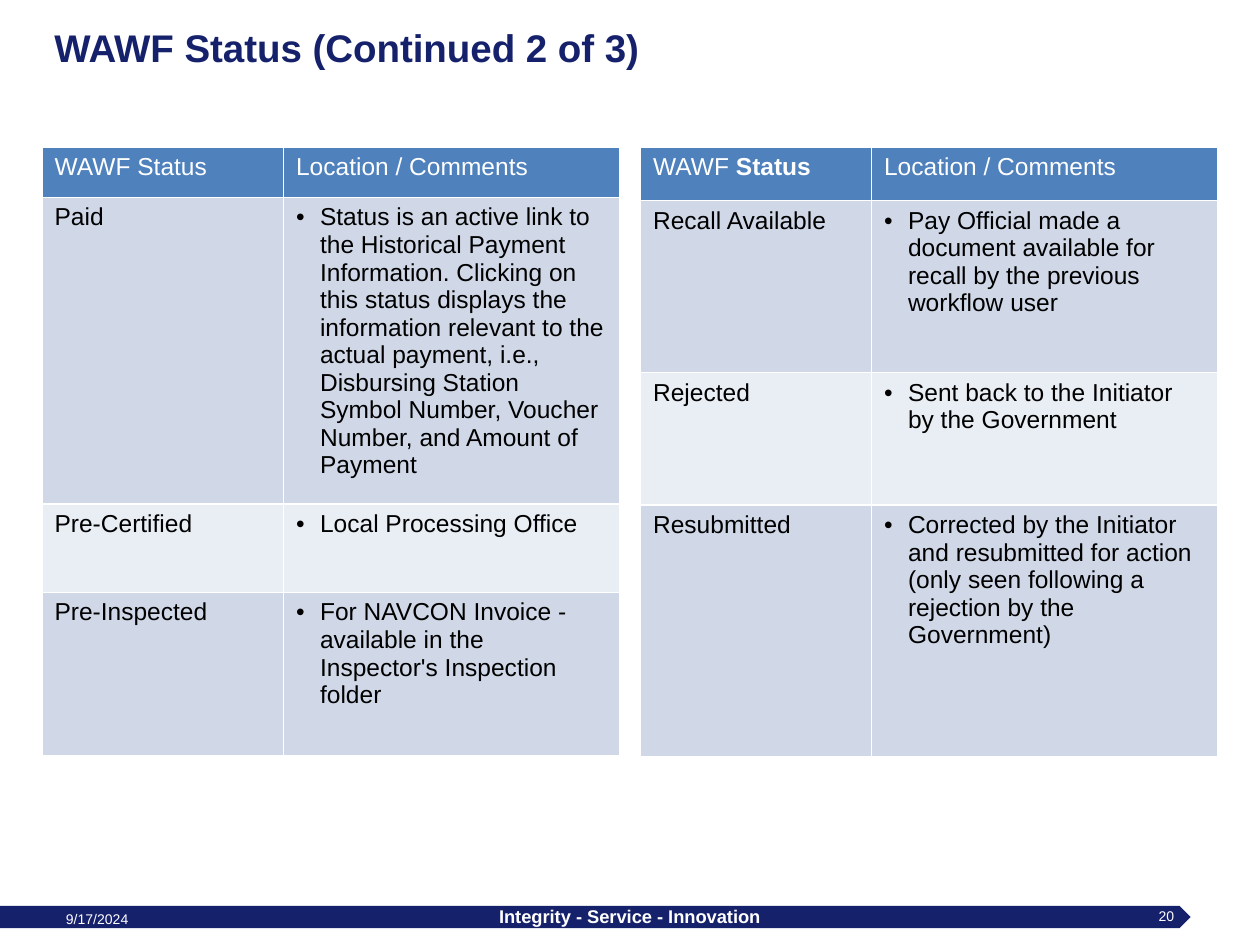
from dataclasses import dataclass

from lxml import etree
from pptx import Presentation
from pptx.dml.color import RGBColor
from pptx.enum.shapes import MSO_SHAPE
from pptx.enum.text import MSO_ANCHOR, PP_ALIGN
from pptx.oxml.ns import qn
from pptx.util import Inches, Pt

PENTAGON = MSO_SHAPE.PENTAGON
MIDDLE = MSO_ANCHOR.MIDDLE
LEFT, CENTER, RIGHT = PP_ALIGN.LEFT, PP_ALIGN.CENTER, PP_ALIGN.RIGHT

FONT = "Arial"
NAVY, WHITE, BLACK = "16216C", "FFFFFF", "000000"
HEADER_FILL = "4F81BD"
BANDS = ("D0D8E8", "E9EDF4")
BULLET_INDENT = Inches(0.19)

# The slide is a grid of 120 columns by 90 rows, 12 units to the inch.
COLUMNS, ROWS = 120, 90
TABLE_TOP = 14


@dataclass
class Run:
    text: str
    bold: bool = False


@dataclass
class Label:
    text: str
    box: tuple[float, float, float, float]
    size: float
    color: str = WHITE
    bold: bool = False
    align: PP_ALIGN = LEFT


@dataclass
class StatusTable:
    left: float
    widths: tuple[float, float]
    heights: tuple[float, ...]
    header: list[Run]
    entries: list[tuple[str, str]]


LABELS = [
    Label("WAWF Status (Continued 2 of 3)", (4, 2, 112, 5), 22, NAVY, True),
    Label("9/17/2024", (5.1, 83, 30, 9), 8),
    Label("Integrity - Service - Innovation", (41, 86.2, 38, 2.2), 10.5, WHITE, True, CENTER),
    Label("20", (86, 86.2, 27, 2), 8, WHITE, False, RIGHT),
]

TABLES = [
    StatusTable(
        4, (23, 32), (4.8, 27.4, 8.4, 15.6), [Run("WAWF Status")],
        [
            ("Paid", "Status is an active link to the Historical Payment Information. "
                     "Clicking on this status displays the information relevant to the "
                     "actual payment, i.e., Disbursing Station Symbol Number, Voucher "
                     "Number, and Amount of Payment"),
            ("Pre-Certified", "Local Processing Office"),
            ("Pre-Inspected", "For NAVCON Invoice - available in the Inspector's "
                              "Inspection folder"),
        ],
    ),
    StatusTable(
        61, (22, 33), (5.1, 16.4, 12.6, 24), [Run("WAWF "), Run("Status", True)],
        [
            ("Recall Available", "Pay Official made a document available for recall by "
                                 "the previous workflow user"),
            ("Rejected", "Sent back to the Initiator by the Government"),
            ("Resubmitted", "Corrected by the Initiator and resubmitted for action (only "
                            "seen following a rejection by the Government)"),
        ],
    ),
]


def rgb(color: str) -> RGBColor:
    return RGBColor.from_string(color)


def grid_box(prs, left: float, top: float, width: float, height: float) -> list[int]:
    """Turn grid units into left, top, width and height on the slide."""
    col, row = prs.slide_width / COLUMNS, prs.slide_height / ROWS
    return [round(v) for v in (left * col, top * row, width * col, height * row)]


def add_run(p, text: str, size: float, color: str, bold: bool = False) -> None:
    r = p.add_run()
    r.text = text
    r.font.name, r.font.size, r.font.bold = FONT, Pt(size), bold
    r.font.color.rgb = rgb(color)


def add_label(prs, s, label: Label) -> None:
    tf = s.shapes.add_textbox(*grid_box(prs, *label.box)).text_frame
    tf.word_wrap = True
    tf.vertical_anchor = MIDDLE
    tf.margin_top = tf.margin_bottom = 0
    p = tf.paragraphs[0]
    p.alignment = label.align
    add_run(p, label.text, label.size, label.color, label.bold)


def add_bullet(p) -> None:
    props = p._p.get_or_add_pPr()
    props.set("marL", str(BULLET_INDENT))
    props.set("indent", str(-BULLET_INDENT))
    etree.SubElement(props, qn("a:buFont")).set("typeface", FONT)
    etree.SubElement(props, qn("a:buChar")).set("char", "•")


def set_borders(cell) -> None:
    """Put a white 1 pt line on each side, ahead of the cell's fill."""
    props = cell._tc.get_or_add_tcPr()
    for place, side in enumerate(("lnL", "lnR", "lnT", "lnB")):
        line = etree.Element(qn(f"a:{side}"), w=str(Pt(1)))
        fill = etree.SubElement(line, qn("a:solidFill"))
        etree.SubElement(fill, qn("a:srgbClr")).set("val", WHITE)
        props.insert(place, line)


def fill_cell(cell, runs: list[Run], fill: str, color: str, bullet: bool = False) -> None:
    cell.fill.solid()
    cell.fill.fore_color.rgb = rgb(fill)
    set_borders(cell)
    p = cell.text_frame.paragraphs[0]
    if bullet:
        add_bullet(p)
    for run in runs:
        add_run(p, run.text, 14, color, run.bold)


def add_status_table(prs, s, spec: StatusTable) -> None:
    box = grid_box(prs, spec.left, TABLE_TOP, sum(spec.widths), sum(spec.heights))
    table = s.shapes.add_table(len(spec.heights), len(spec.widths), *box).table
    for column, width in zip(table.columns, spec.widths):
        column.width = round(prs.slide_width * width / COLUMNS)
    for row, height in zip(table.rows, spec.heights):
        row.height = round(prs.slide_height * height / ROWS)

    fill_cell(table.cell(0, 0), spec.header, HEADER_FILL, WHITE)
    fill_cell(table.cell(0, 1), [Run("Location / Comments")], HEADER_FILL, WHITE)
    for i, (status, comment) in enumerate(spec.entries):
        band = BANDS[i % len(BANDS)]
        fill_cell(table.cell(i + 1, 0), [Run(status)], band, BLACK)
        fill_cell(table.cell(i + 1, 1), [Run(comment)], band, BLACK, bullet=True)


def add_footer_band(prs, s) -> None:
    sp = s.shapes.add_shape(PENTAGON, *grid_box(prs, 0, 86.28, 113.4, 2.1))
    sp.shadow.inherit = False
    sp.fill.solid()
    sp.fill.fore_color.rgb = rgb(NAVY)
    sp.line.fill.background()


def main() -> None:
    prs = Presentation()
    prs.slide_width, prs.slide_height = Inches(10), Inches(7.5)
    s = prs.slides.add_slide(prs.slide_layouts[6])
    add_footer_band(prs, s)
    for label in LABELS:
        add_label(prs, s, label)
    for table in TABLES:
        add_status_table(prs, s, table)
    prs.save("out.pptx")


if __name__ == "__main__":
    main()
